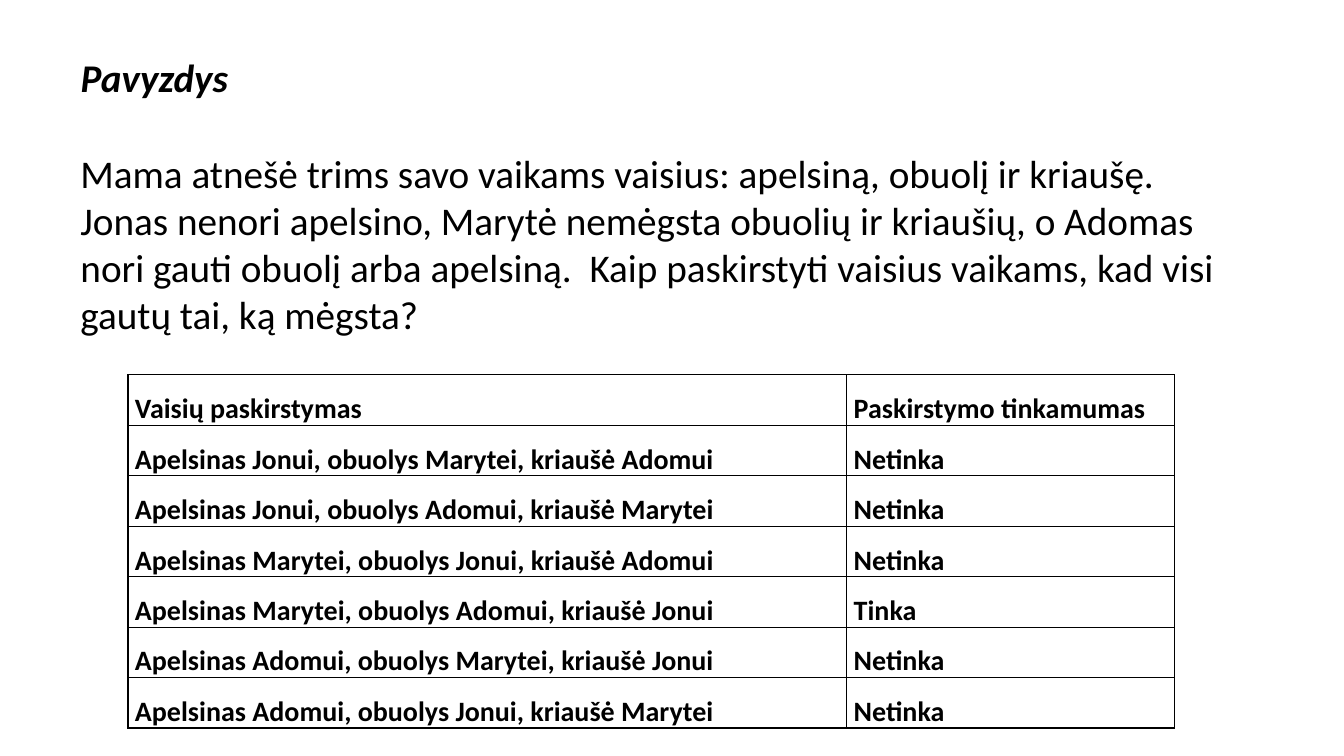
import dataclasses

import lxml.etree
import pptx
import pptx.dml.color
import pptx.enum.text
import pptx.oxml.ns
import pptx.util

Pt = pptx.util.Pt


@dataclasses.dataclass(frozen=True)
class Theme:
    """Hold the colours, font and type sizes of the slide."""
    font: str = "Calibri"
    ink: str = "000000"
    paper: str = "FFFFFF"
    text_size: int = 28
    cell_size: int = 20
    border: int = 1


THEME = Theme()
LEFT, TEXT_WIDTH = 50.4, 826.6
PROBLEM = (
    "Mama atnešė trims savo vaikams vaisius: apelsiną, obuolį ir kriaušę. "
    "Jonas nenori apelsino, Marytė nemėgsta obuolių ir kriaušių, o Adomas "
    "nori gauti obuolį arba apelsiną.  Kaip paskirstyti vaisius vaikams, "
    "kad visi gautų tai, ką mėgsta?"
)
HEADINGS = ("Vaisių paskirstymas", "Paskirstymo tinkamumas")
ASSIGNMENTS = (
    ("Jonui", "Marytei", "Adomui", "Netinka"),
    ("Jonui", "Adomui", "Marytei", "Netinka"),
    ("Marytei", "Jonui", "Adomui", "Netinka"),
    ("Marytei", "Adomui", "Jonui", "Tinka"),
    ("Adomui", "Marytei", "Jonui", "Netinka"),
    ("Adomui", "Jonui", "Marytei", "Netinka"),
)


def rgb(colour):
    """Return the colour object for a hex string."""
    return pptx.dml.color.RGBColor.from_string(colour)


def write(frame, text, *, size, bold=False, italic=False, spacing=None):
    """Put one left-aligned formatted paragraph into a text frame."""
    frame.word_wrap = True
    para = frame.paragraphs[0]
    para.alignment = pptx.enum.text.PP_ALIGN.LEFT
    para.line_spacing = spacing
    span = para.add_run()
    span.text = text
    span.font.name = THEME.font
    span.font.size = Pt(size)
    span.font.bold = bold
    span.font.italic = italic
    span.font.color.rgb = rgb(THEME.ink)


def add_heading(page, text):
    """Place and format the title placeholder."""
    title = page.shapes.title
    title.left, title.top = Pt(LEFT), Pt(34.56)
    title.width, title.height = Pt(TEXT_WIDTH), Pt(41.4)
    frame = title.text_frame
    frame.vertical_anchor = pptx.enum.text.MSO_ANCHOR.TOP
    frame.auto_size = pptx.enum.text.MSO_AUTO_SIZE.NONE
    write(frame, text, size=THEME.text_size, bold=True, italic=True)


def add_problem(page, text):
    """Add the text box with the problem statement."""
    box = page.shapes.add_textbox(Pt(LEFT), Pt(102.9), Pt(TEXT_WIDTH), Pt(176.5))
    write(box.text_frame, text, size=THEME.text_size)


def outline(cell):
    """Draw a solid border on all four sides of a cell."""
    qn = pptx.oxml.ns.qn
    properties = cell._tc.get_or_add_tcPr()
    for side in "LRTB":
        line = lxml.etree.SubElement(
            properties, qn(f"a:ln{side}"), w=str(Pt(THEME.border)))
        fill = lxml.etree.SubElement(line, qn("a:solidFill"))
        lxml.etree.SubElement(fill, qn("a:srgbClr"), val=THEME.ink)


def add_grid(page, rows, widths, row_height):
    """Add the bordered table of fruit assignments."""
    frame = page.shapes.add_table(
        len(rows), len(widths), Pt(91.4), Pt(267.8),
        Pt(sum(widths)), Pt(row_height * len(rows)))
    table = frame.table
    table.first_row = table.horz_banding = False
    for column, width in zip(table.columns, widths):
        column.width = Pt(width)
    for row, texts in zip(table.rows, rows):
        row.height = Pt(row_height)
        for cell, text in zip(row.cells, texts):
            outline(cell)
            cell.fill.solid()
            cell.fill.fore_color.rgb = rgb(THEME.paper)
            cell.margin_left = cell.margin_right = Pt(5.04)
            cell.margin_top = cell.margin_bottom = 0
            cell.vertical_anchor = pptx.enum.text.MSO_ANCHOR.MIDDLE
            write(cell.text_frame, text, size=THEME.cell_size,
                  bold=True, spacing=1.5)


def main():
    """Build and save the slide."""
    deck = pptx.Presentation()
    deck.slide_width, deck.slide_height = Pt(960), Pt(540)
    page = deck.slides.add_slide(deck.slide_layouts.get_by_name("Title Only"))
    add_heading(page, "Pavyzdys")
    add_problem(page, PROBLEM)
    rows = [HEADINGS] + [
        (f"Apelsinas {orange}, obuolys {apple}, kriaušė {pear}", verdict)
        for orange, apple, pear, verdict in ASSIGNMENTS
    ]
    add_grid(page, rows, widths=(513.4, 234), row_height=31)
    deck.save("out.pptx")


if __name__ == "__main__":
    main()
